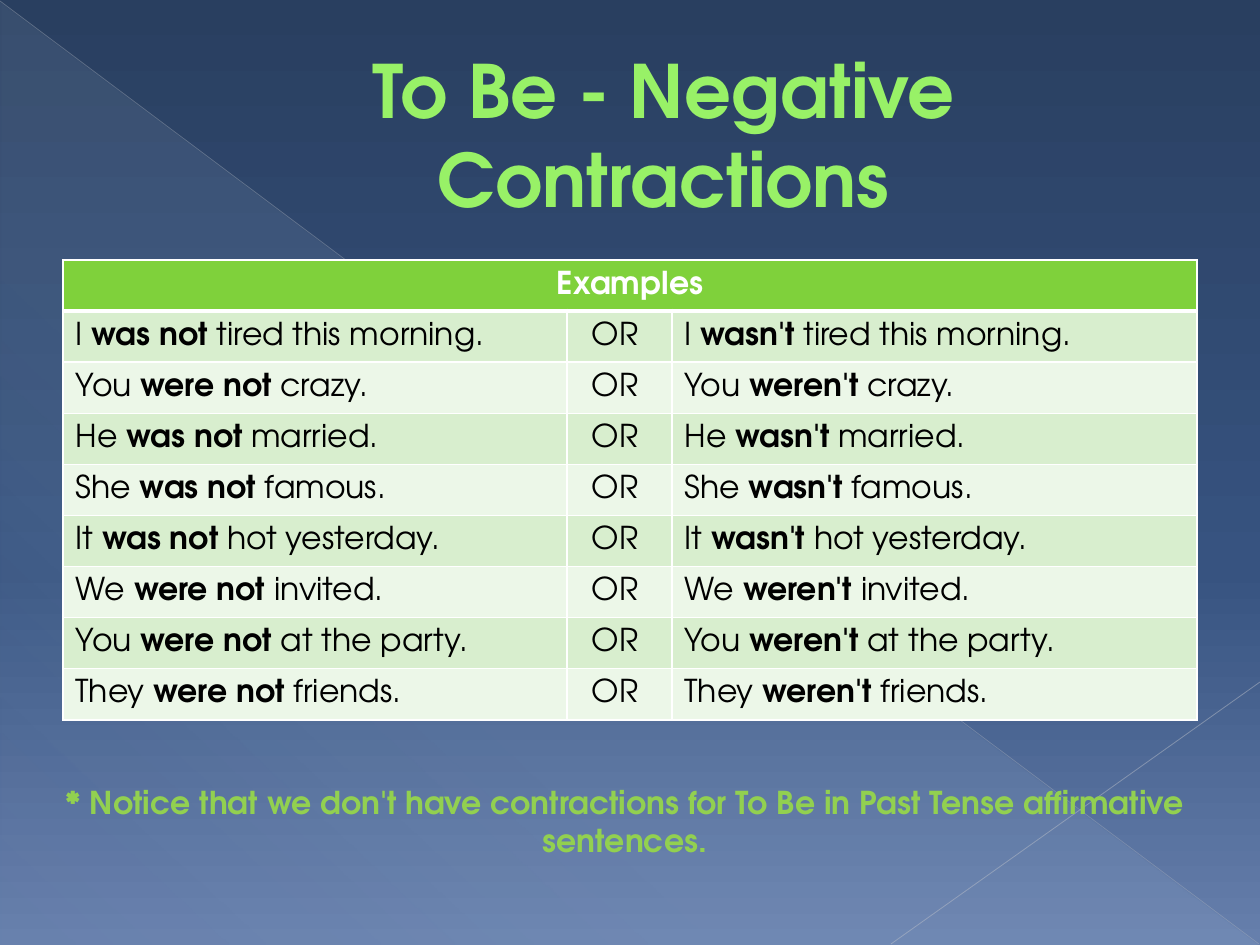
from dataclasses import dataclass
from lxml.etree import SubElement
from pptx import Presentation
from pptx.dml.color import RGBColor
from pptx.enum.shapes import MSO_CONNECTOR, MSO_SHAPE
from pptx.enum.text import MSO_ANCHOR, MSO_AUTO_SIZE, PP_ALIGN
from pptx.oxml.ns import qn
from pptx.util import Pt


@dataclass(frozen=True)
class Theme:
    font: str = "TeX Gyre Adventor"
    big: int = 42
    small: int = 18
    title: str = "98F167"
    edge: str = "589129"
    note: str = "92D050"
    head: str = "7FD13B"
    bands: tuple = ("D8EECE", "ECF7E8")
    white: str = "FFFFFF"
    black: str = "000000"
    back: tuple = ((0, "293F60", 100), (60, "375380", 100), (100, "667FAC", 100))
    wedge: tuple = ((0, "D6ECFF", 10), (70, "D6ECFF", 8), (100, "D6ECFF", 1))


def px(count):
    return round(count * 914400 / 126)


def add_color(parent, color, alpha=100):
    node = SubElement(parent, qn("a:srgbClr"), val=color)
    if alpha < 100:
        SubElement(node, qn("a:alpha"), val=str(alpha * 1000))


def set_grad(fill, root, stops, angle):
    """Fill with any number of stops; root is the element that holds the fill."""
    fill.gradient()
    grad = root.find(".//" + qn("a:gradFill"))
    for child in list(grad):
        grad.remove(child)
    group = SubElement(grad, qn("a:gsLst"))
    for place, color, alpha in stops:
        add_color(SubElement(group, qn("a:gs"), pos=str(place * 1000)), color, alpha)
    SubElement(grad, qn("a:lin"), ang=str(angle * 60000), scaled="0")


def add_line(parent, side, color, width):
    line = SubElement(parent, qn("a:" + side), w=str(Pt(width)))
    add_color(SubElement(line, qn("a:solidFill")), color)
    return line


class Deck:
    def __init__(self, theme):
        self.theme = theme
        self.file = Presentation()
        self.file.slide_width, self.file.slide_height = px(1260), px(945)
        self.slide = self.file.slides.add_slide(self.file.slide_layouts[5])
        self.shapes = self.slide.shapes

    def style(self, run, size, color, bold=False):
        font = run.font
        font.name, font.size, font.bold = self.theme.font, Pt(size), bold
        font.color.rgb = RGBColor.from_string(color)

    def back(self):
        set_grad(self.slide.background.fill, self.slide.element, self.theme.back, 90)

    def wedge(self, *box):
        shape = self.shapes.add_shape(MSO_SHAPE.RIGHT_TRIANGLE, *map(px, box))
        shape.shadow.inherit = False
        shape.line.fill.background()
        set_grad(shape.fill, shape.element.spPr, self.theme.wedge, 133)

    def line(self, ends, color, width, alpha):
        line = self.shapes.add_connector(MSO_CONNECTOR.STRAIGHT, *map(px, ends))
        line.line.width = Pt(width)
        line.line.color.rgb = RGBColor.from_string(color)
        paint = line.element.spPr.find(".//" + qn("a:srgbClr"))
        SubElement(paint, qn("a:alpha"), val=str(alpha * 1000))
        SubElement(line.element.spPr, qn("a:effectLst"))

    def title(self, text, *box):
        shape = self.shapes.title
        shape.left, shape.top, shape.width, shape.height = map(px, box)
        self.shapes.element.append(shape.element)
        frame = shape.text_frame
        frame.text = text
        frame.auto_size = MSO_AUTO_SIZE.NONE
        frame.vertical_anchor = MSO_ANCHOR.MIDDLE
        para = frame.paragraphs[0]
        para.alignment = PP_ALIGN.CENTER
        para._p.get_or_add_pPr().set("marL", str(px(67)))
        run = para.runs[0]
        self.style(run, self.theme.big, self.theme.title, True)
        props = run.font._element
        props.insert(0, add_line(props, "ln", self.theme.edge, 0.5))

    def note(self, text, *box):
        frame = self.shapes.add_textbox(*map(px, box)).text_frame
        frame.word_wrap = True
        frame.text = text
        para = frame.paragraphs[0]
        para.alignment = PP_ALIGN.CENTER
        self.style(para.runs[0], self.theme.small, self.theme.note, True)

    def cell(self, cell, parts, fill, color, align, top=1, base=1):
        """Write (text, bold) parts and draw the four borders."""
        cell.vertical_anchor = MSO_ANCHOR.MIDDLE
        cell.fill.solid()
        cell.fill.fore_color.rgb = RGBColor.from_string(fill)
        para = cell.text_frame.paragraphs[0]
        para.alignment = align
        for text, bold in parts:
            run = para.add_run()
            run.text = text
            self.style(run, self.theme.small, color, bold)
        props = cell._tc.get_or_add_tcPr()
        sides = (("lnL", 1), ("lnR", 1), ("lnT", top), ("lnB", base))
        for index, (side, width) in enumerate(sides):
            props.insert(index, add_line(props, side, self.theme.white, width))

    def table(self, head, rows, left, top, widths, height):
        count = len(rows) + 1
        table = self.shapes.add_table(
            count, len(widths), px(left), px(top), px(sum(widths)), px(height)
        ).table
        for col, width in zip(table.columns, widths):
            col.width = px(width)
        for row in table.rows:
            row.height = px(height / count)
        theme = self.theme
        table.cell(0, 0).merge(table.cell(0, len(widths) - 1))
        for col in range(len(widths)):
            parts = [(head, True)] if col == 0 else []
            self.cell(table.cell(0, col), parts, theme.head, theme.white,
                      PP_ALIGN.CENTER, base=3)
        for index, (who, verb, rest) in enumerate(rows):
            cells = (
                ([(who + " ", False), (verb + " not", True), (" " + rest, False)], PP_ALIGN.LEFT),
                ([("OR ", False)], PP_ALIGN.CENTER),
                ([(who + " ", False), (verb + "n't", True), (" " + rest, False)], PP_ALIGN.LEFT),
            )
            for col, (parts, align) in enumerate(cells):
                self.cell(table.cell(index + 1, col), parts, theme.bands[index % 2],
                          theme.black, align, top=1 if index else 3)


ROWS = (
    ("I", "was", "tired this morning."),
    ("You", "were", "crazy."),
    ("He", "was", "married."),
    ("She", "was", "famous."),
    ("It", "was", "hot yesterday."),
    ("We", "were", "invited."),
    ("You", "were", "at the party."),
    ("They", "were", "friends."),
)


def main():
    deck = Deck(Theme())
    deck.back()
    deck.wedge(1, 2, 1258, 943)
    deck.line((0, 1, 1259, 944), "B7BCC5", 0.39, 35)
    deck.line((1260, 682, 891, 944), "BFC3CB", 0.47, 45)
    deck.title("To Be - Negative Contractions", 63, 37, 1134, 193)
    deck.table("Examples", ROWS, 63, 260, (504, 105, 525), 460)
    deck.note("* Notice that we don't have contractions for To Be in Past Tense "
              "affirmative sentences.", 53, 777, 1144, 89)
    deck.file.save("out.pptx")


if __name__ == "__main__":
    main()
